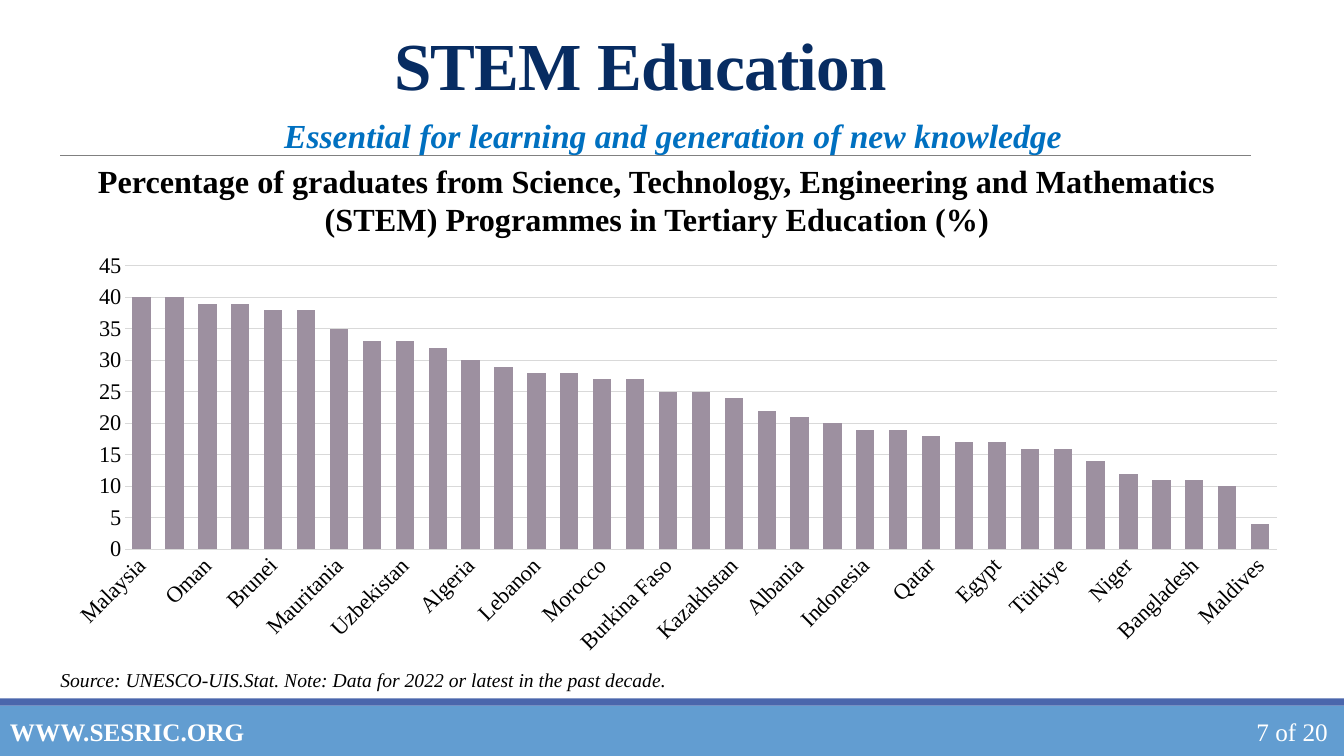
import pptx
import pptx.chart.data
import pptx.dml.color
import pptx.enum.chart
import pptx.enum.shapes
import pptx.enum.text
import pptx.oxml
import pptx.oxml.ns
import pptx.util

Inches = pptx.util.Inches
Pt = pptx.util.Pt
RGBColor = pptx.dml.color.RGBColor
Align = pptx.enum.text.PP_ALIGN
Anchor = pptx.enum.text.MSO_ANCHOR

FONT = "Times New Roman"
NAVY = RGBColor(0x07, 0x2C, 0x62)
BLUE = RGBColor(0x00, 0x70, 0xC0)
FOOTER_BLUE = RGBColor(0x62, 0x9D, 0xD1)
STRIPE_BLUE = RGBColor(0x4A, 0x66, 0xAC)
GRAY = RGBColor(0x80, 0x80, 0x80)
GRID_GRAY = RGBColor(0xD9, 0xD9, 0xD9)
BAR_MAUVE = RGBColor(0x9D, 0x90, 0xA0)
BLACK = RGBColor(0, 0, 0)
WHITE = RGBColor(0xFF, 0xFF, 0xFF)


def set_font(font, color, **formats):
    font.name = FONT
    font.color.rgb = color
    for name, value in formats.items():
        setattr(font, name, value)


presentation = pptx.Presentation()
presentation.slide_width = Inches(13.33)
presentation.slide_height = Inches(7.5)
slide = presentation.slides.add_slide(presentation.slide_layouts[6])

# Footer bands
for top, height, color in [(7, 0.5, FOOTER_BLUE), (6.93, 0.07, STRIPE_BLUE)]:
    band = slide.shapes.add_shape(
        pptx.enum.shapes.MSO_SHAPE.RECTANGLE,
        Inches(0), Inches(top), Inches(13.33), Inches(height))
    band.shadow.inherit = False
    band.fill.solid()
    band.fill.fore_color.rgb = color
    band.line.fill.background()

# Rule under the subtitle
rule = slide.shapes.add_connector(
    pptx.enum.shapes.MSO_CONNECTOR.STRAIGHT,
    Inches(0.6), Inches(1.54), Inches(12.41), Inches(1.54))
rule.line.color.rgb = GRAY
rule.line.width = Pt(0.5)
pptx.oxml.ns.qn("a:effectLst")
rule_properties = rule._element.spPr
rule_properties.append(pptx.oxml.parse_xml(
    '<a:effectLst xmlns:a="http://schemas.openxmlformats.org/drawingml/2006/main"/>'))

# Texts: box, right inset, anchor, alignment, line spacing, wording, colour, font
texts = [
    ((0.62, 0.31, 11.8, 0.77), 0.43, Anchor.MIDDLE, Align.CENTER, 0.85,
     "STEM Education", NAVY, {"size": Pt(48), "bold": True}),
    ((0.5, 6.58, 11.91, 0.34), 0.1, Anchor.TOP, Align.JUSTIFY, 1.0,
     "Source: UNESCO-UIS.Stat. Note: Data for 2022 or latest in the past decade.",
     BLACK, {"size": Pt(14), "italic": True}),
    ((0.62, 1.55, 11.8, 0.88), 0.1, Anchor.TOP, Align.CENTER, 1.0,
     "Percentage of graduates from Science, Technology, Engineering and Mathematics "
     "(STEM) Programmes in Tertiary Education (%)",
     BLACK, {"size": Pt(23), "bold": True}),
    ((0.43, 1.09, 12.49, 0.5), 0.1, Anchor.TOP, Align.CENTER, 1.0,
     "Essential for learning and generation of new knowledge",
     BLUE, {"size": Pt(24), "bold": True, "italic": True}),
    ((0, 7.06, 2.58, 0.4), 0.1, Anchor.MIDDLE, Align.LEFT, 1.0,
     "WWW.SESRIC.ORG", WHITE, {"size": Pt(18), "bold": True}),
    ((11.9, 7.06, 1.43, 0.4), 0.16, Anchor.MIDDLE, Align.RIGHT, 1.0,
     "7 of 20", WHITE, {"size": Pt(18)}),
]
for box, right_inset, anchor, alignment, spacing, wording, color, formats in texts:
    frame = slide.shapes.add_textbox(*map(Inches, box)).text_frame
    frame.word_wrap = True
    frame.margin_right = Inches(right_inset)
    frame.vertical_anchor = anchor
    paragraph = frame.paragraphs[0]
    paragraph.alignment = alignment
    paragraph.line_spacing = spacing
    run = paragraph.add_run()
    run.text = wording
    set_font(run.font, color, **formats)
    if wording == "STEM Education":
        run.font._element.set("spc", "-50")

# Column chart of STEM graduates by country
graduates = {
    "Malaysia": 40, "Turkmenistan": 40, "Oman": 39, "Iran": 39, "Brunei": 38,
    "Tunisia": 38, "Mauritania": 35, "UAE": 33, "Uzbekistan": 33, "Syria": 32,
    "Algeria": 30, "Sudan": 29, "Lebanon": 28, "Saudi Arabia": 28, "Morocco": 27,
    "Jordan": 27, "Burkina Faso": 25, "Azerbaijan": 25, "Kazakhstan": 24,
    "Tajikistan": 22, "Albania": 21, "Benin": 20, "Indonesia": 19,
    "Kyrgyzstan": 19, "Qatar": 18, "Palestine": 17, "Egypt": 17, "Bahrain": 16,
    "Türkiye": 16, "Chad": 14, "Niger": 12, "Afghanistan": 11,
    "Bangladesh": 11, "Mozambique": 10, "Maldives": 4,
}
chart_data = pptx.chart.data.CategoryChartData(number_format="0")
chart_data.categories = list(graduates)
chart_data.add_series("Series 1", list(graduates.values()))
chart = slide.shapes.add_chart(
    pptx.enum.chart.XL_CHART_TYPE.COLUMN_CLUSTERED,
    Inches(0.5), Inches(2.43), Inches(12.41), Inches(4.15), chart_data).chart
chart.has_legend = False
chart.has_title = False
set_font(chart.font, BLACK, size=Pt(16))

plot = chart.plots[0]
plot.gap_width = 80
plot.overlap = -27
plot.vary_by_categories = False
bars = plot.series[0]
bars.format.fill.solid()
bars.format.fill.fore_color.rgb = BAR_MAUVE
bars.invert_if_negative = False

# Axes
for axis in (chart.category_axis, chart.value_axis):
    axis.major_tick_mark = pptx.enum.chart.XL_TICK_MARK.NONE
    axis.minor_tick_mark = pptx.enum.chart.XL_TICK_MARK.NONE
    set_font(axis.tick_labels.font, BLACK, size=Pt(16))

value_axis = chart.value_axis
value_axis.minimum_scale = 0
value_axis.maximum_scale = 45
value_axis.major_unit = 5
value_axis.tick_labels.number_format = "0"
value_axis.tick_labels.number_format_is_linked = False
value_axis.format.line.fill.background()
value_axis.has_major_gridlines = True
for line in (value_axis.major_gridlines.format.line, chart.category_axis.format.line):
    line.color.rgb = GRID_GRAY
    line.width = Pt(0.75)

# Slanted country names
label_body = chart.category_axis._element.find(
    pptx.oxml.ns.qn("c:txPr")).find(pptx.oxml.ns.qn("a:bodyPr"))
label_body.set("rot", "-2700000")
label_body.set("vert", "horz")

presentation.save("out.pptx")
